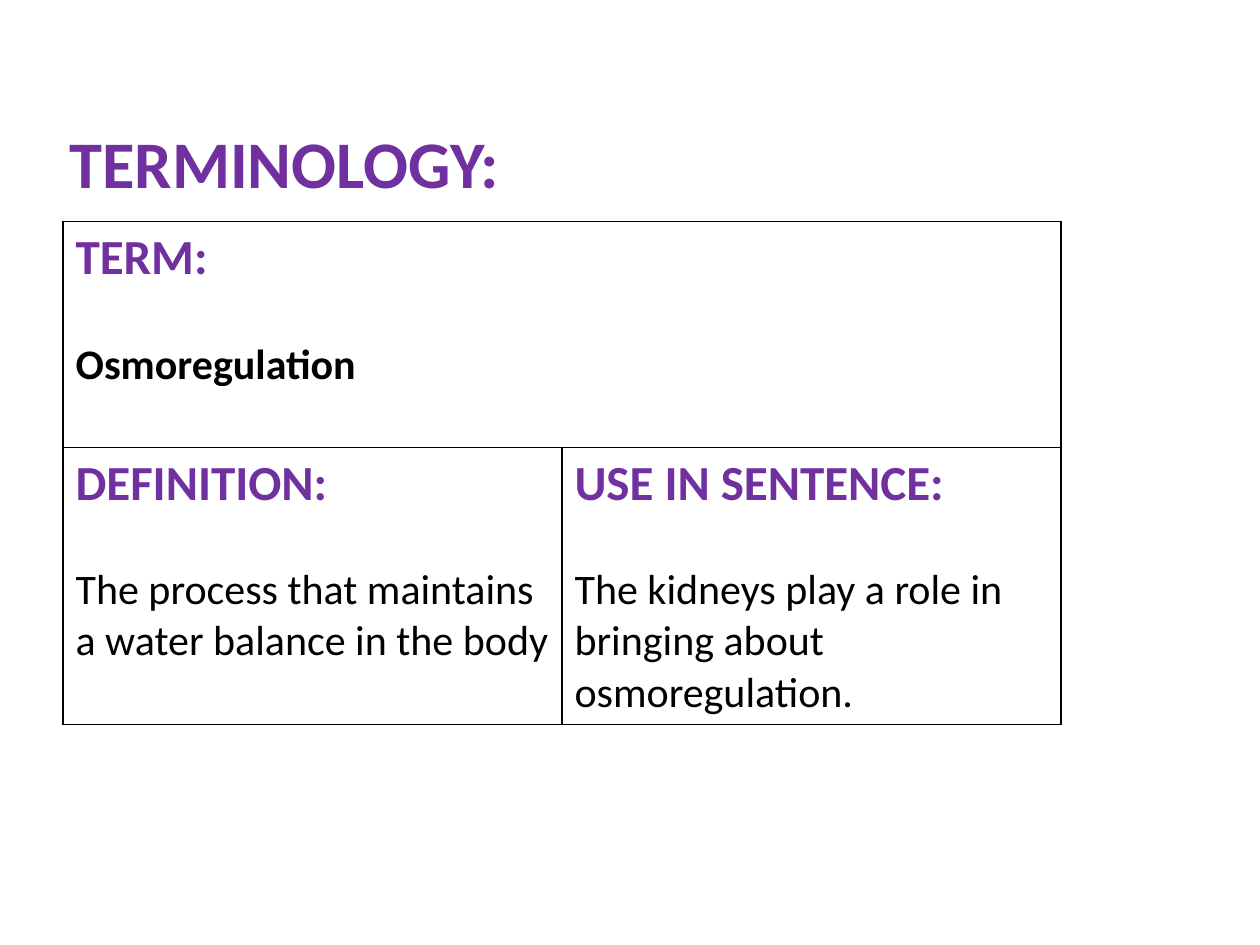
from typing import NamedTuple

from lxml.etree import SubElement
from pptx import Presentation
from pptx.dml.color import RGBColor
from pptx.enum.text import MSO_ANCHOR
from pptx.oxml.ns import qn
from pptx.util import Inches, Pt

FONT = "Calibri"
COLORS = {"heading": "7030A0", "body": "000000", "border": "000000", "paper": "FFFFFF"}
LEFT, WIDTH = 0.5, 7.92
ROW_HEIGHTS = (1.79, 2.2)


class Entry(NamedTuple):
    row: int
    col: int
    heading: str
    body: str
    bold: bool = False


ENTRIES = (
    Entry(0, 0, "TERM:", "Osmoregulation", True),
    Entry(1, 0, "DEFINITION:", "The process that maintains a water balance in the body"),
    Entry(1, 1, "USE IN SENTENCE:",
          "The kidneys play a role in bringing about osmoregulation."),
)


def write(p, text: str, size: float, color: str, bold: bool) -> None:
    p.text = text
    font = p.runs[0].font
    font.name, font.size, font.bold = FONT, Pt(size), bold
    font.color.rgb = RGBColor.from_string(COLORS[color])


def style_cell(cell) -> None:
    """Give a cell thin borders and a plain fill."""
    tc_pr = cell._tc.get_or_add_tcPr()
    for side in ("lnL", "lnR", "lnT", "lnB"):
        line = SubElement(tc_pr, qn(f"a:{side}"), w=str(Pt(1)))
        fill = SubElement(line, qn("a:solidFill"))
        SubElement(fill, qn("a:srgbClr"), val=COLORS["border"])
    cell.fill.solid()
    cell.fill.fore_color.rgb = RGBColor.from_string(COLORS["paper"])


def fill_entry(table, entry: Entry) -> None:
    tf = table.cell(entry.row, entry.col).text_frame
    write(tf.paragraphs[0], entry.heading, 28, "heading", True)
    p = tf.add_paragraph()
    write(p, entry.body, 24, "body", entry.bold)
    p.space_before = Pt(29.3)


def main() -> None:
    prs = Presentation()
    prs.slide_width, prs.slide_height = Inches(10), Inches(7.5)
    s = prs.slides.add_slide(prs.slide_layouts[6])

    # Title
    sp = s.shapes.add_textbox(Inches(LEFT), Inches(0.35), Inches(WIDTH), Inches(1.25))
    tf = sp.text_frame
    tf.word_wrap = True
    tf.vertical_anchor = MSO_ANCHOR.BOTTOM
    tf.margin_left = tf.margin_right = Inches(0.05)
    tf.margin_top = tf.margin_bottom = Inches(0)
    write(tf.paragraphs[0], "TERMINOLOGY:", 38, "heading", True)

    # Term table
    table = s.shapes.add_table(2, 2, Inches(LEFT), Inches(1.76), Inches(WIDTH),
                               Inches(sum(ROW_HEIGHTS))).table
    table.first_row = table.horz_banding = False
    for row, height in zip(table.rows, ROW_HEIGHTS):
        row.height = Inches(height)
    for cell in table.iter_cells():
        style_cell(cell)
    table.cell(0, 0).merge(table.cell(0, 1))
    for entry in ENTRIES:
        fill_entry(table, entry)

    prs.save("out.pptx")


if __name__ == "__main__":
    main()
